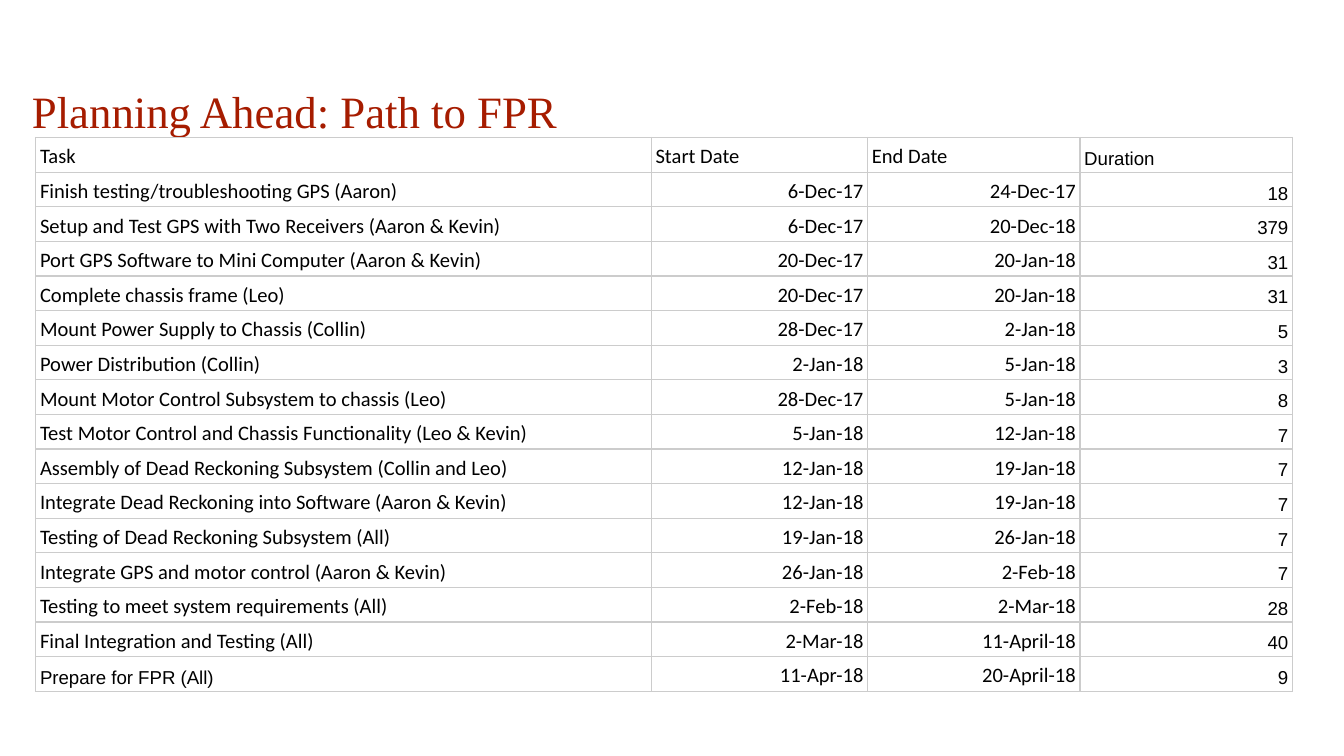
import dataclasses

import lxml.etree
import pptx
import pptx.dml.color
import pptx.enum.text
import pptx.oxml.ns
import pptx.util

Pt = pptx.util.Pt
Color = pptx.dml.color.RGBColor
Align = pptx.enum.text.PP_ALIGN
Anchor = pptx.enum.text.MSO_ANCHOR


@dataclasses.dataclass(frozen=True)
class Theme:
    title_color: Color = Color.from_string("A61C00")
    ink: Color = Color.from_string("000000")
    paper: Color = Color.from_string("FFFFFF")
    grid: str = "CCCCCC"
    grid_width: float = 0.75
    title_font: tuple = ("Times New Roman", 24)
    text_font: tuple = ("Calibri", 11)
    plain_font: tuple = ("Arial", 10)


THEME = Theme()
HEADINGS = ("Task", "Start Date", "End Date", "Duration")
TASKS = (
    ("Finish testing/troubleshooting GPS (Aaron)", "6-Dec-17", "24-Dec-17", "18"),
    ("Setup and Test GPS with Two Receivers (Aaron & Kevin)", "6-Dec-17", "20-Dec-18", "379"),
    ("Port GPS Software to Mini Computer (Aaron & Kevin)", "20-Dec-17", "20-Jan-18", "31"),
    ("Complete chassis frame (Leo)", "20-Dec-17", "20-Jan-18", "31"),
    ("Mount Power Supply to Chassis (Collin)", "28-Dec-17", "2-Jan-18", "5"),
    ("Power Distribution (Collin)", "2-Jan-18", "5-Jan-18", "3"),
    ("Mount Motor Control Subsystem to chassis (Leo)", "28-Dec-17", "5-Jan-18", "8"),
    ("Test Motor Control and Chassis Functionality (Leo & Kevin)", "5-Jan-18", "12-Jan-18", "7"),
    ("Assembly of Dead Reckoning Subsystem (Collin and Leo)", "12-Jan-18", "19-Jan-18", "7"),
    ("Integrate Dead Reckoning into Software (Aaron & Kevin)", "12-Jan-18", "19-Jan-18", "7"),
    ("Testing of Dead Reckoning Subsystem (All)", "19-Jan-18", "26-Jan-18", "7"),
    ("Integrate GPS and motor control (Aaron & Kevin)", "26-Jan-18", "2-Feb-18", "7"),
    ("Testing to meet system requirements (All)", "2-Feb-18", "2-Mar-18", "28"),
    ("Final Integration and Testing (All)", "2-Mar-18", "11-April-18", "40"),
    ("Prepare for FPR (All)", "11-Apr-18", "20-April-18", "9"),
)
COLUMN_SHARES = (4.58, 1.61, 1.58, 1.58)


def add_span(para, text, font, color):
    span = para.add_run()
    span.text = text
    span.font.name, size = font
    span.font.size = Pt(size)
    span.font.color.rgb = color


def add_title(page, text, left, top, width, height):
    box = page.shapes.add_textbox(Pt(left), Pt(top), Pt(width), Pt(height))
    frame = box.text_frame
    frame.word_wrap = True
    frame.margin_left = frame.margin_right = Pt(7.2)
    frame.margin_top = frame.margin_bottom = Pt(7.2)
    add_span(frame.paragraphs[0], text, THEME.title_font, THEME.title_color)


def add_borders(cell):
    properties = cell._tc.get_or_add_tcPr()
    for position, side in enumerate(("lnL", "lnR", "lnT", "lnB")):
        line = lxml.etree.Element(pptx.oxml.ns.qn(f"a:{side}"), w=str(Pt(THEME.grid_width)))
        fill = lxml.etree.SubElement(line, pptx.oxml.ns.qn("a:solidFill"))
        lxml.etree.SubElement(fill, pptx.oxml.ns.qn("a:srgbClr"), val=THEME.grid)
        properties.insert(position, line)


def fill_cell(cell, text, font, alignment):
    cell.fill.solid()
    cell.fill.fore_color.rgb = THEME.paper
    cell.vertical_anchor = Anchor.BOTTOM
    cell.margin_left = cell.margin_right = Pt(2.25)
    cell.margin_top = cell.margin_bottom = Pt(1.5)
    para = cell.text_frame.paragraphs[0]
    para.alignment = alignment
    para.line_spacing = 1.15
    add_span(para, text, font, THEME.ink)
    add_borders(cell)


def add_schedule(page, left, top, width, height):
    rows = (HEADINGS, *TASKS)
    table = page.shapes.add_table(
        len(rows), len(HEADINGS), Pt(left), Pt(top), Pt(width), Pt(height)
    ).table
    table.first_row = table.horz_banding = False
    for column, share in zip(table.columns, COLUMN_SHARES):
        column.width = Pt(width * share / sum(COLUMN_SHARES))
    for row in table.rows:
        row.height = Pt(height / len(rows))
    last_row, last_column = len(rows) - 1, len(HEADINGS) - 1
    for row_index, values in enumerate(rows):
        for column_index, text in enumerate(values):
            plain = column_index == last_column or (row_index, column_index) == (last_row, 0)
            font = THEME.plain_font if plain else THEME.text_font
            alignment = Align.RIGHT if row_index and column_index else Align.LEFT
            fill_cell(table.cell(row_index, column_index), text, font, alignment)


def add_schedule_page(deck):
    page = deck.slides.add_slide(deck.slide_layouts[6])
    add_title(page, "Planning Ahead: Path to FPR", 10, 37.5, 618.5, 36.7)
    add_schedule(page, 19.2, 73.7, 673.2, 297)


def main():
    deck = pptx.Presentation()
    deck.slide_width, deck.slide_height = Pt(720), Pt(405)
    add_schedule_page(deck)
    deck.save("out.pptx")


if __name__ == "__main__":
    main()
